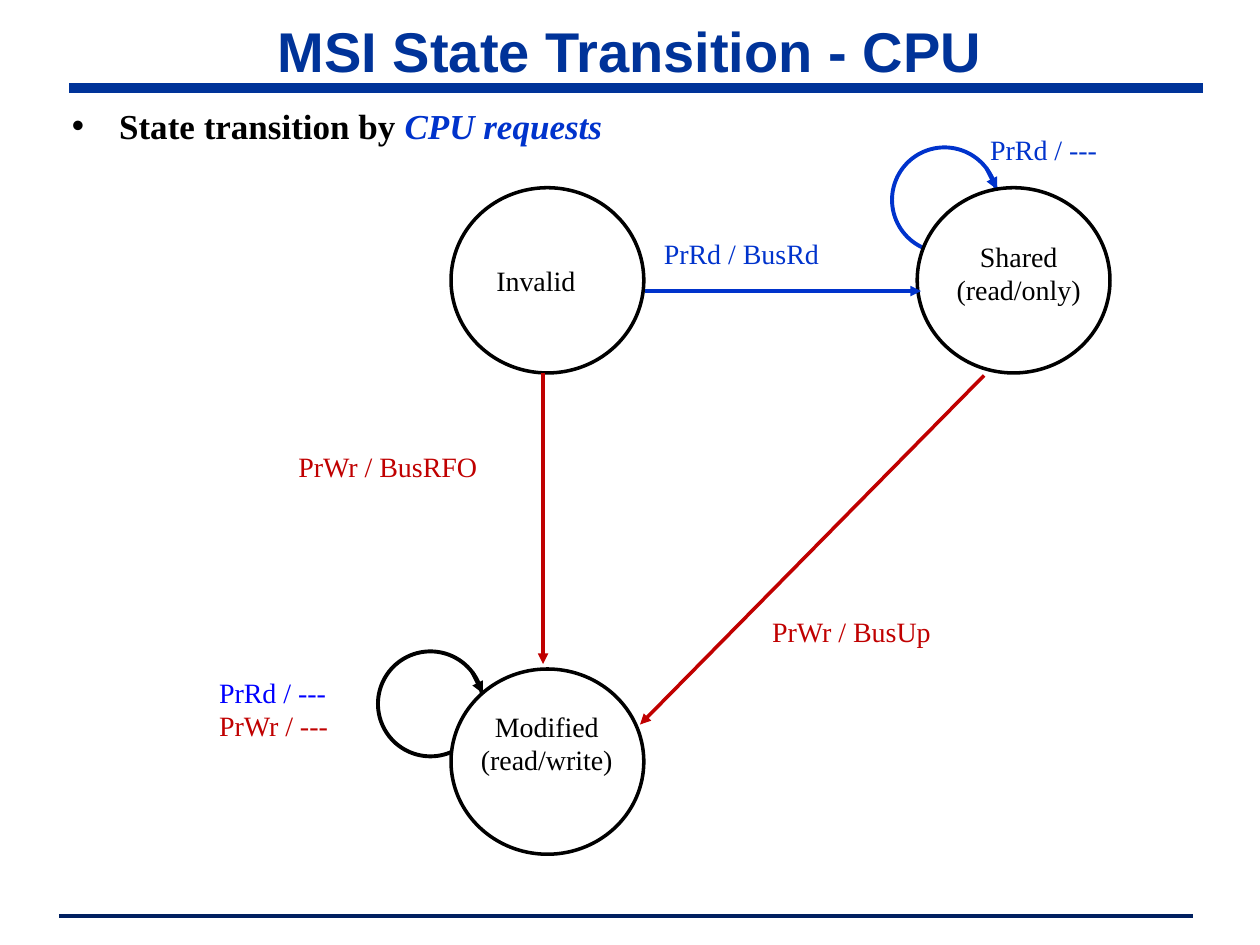
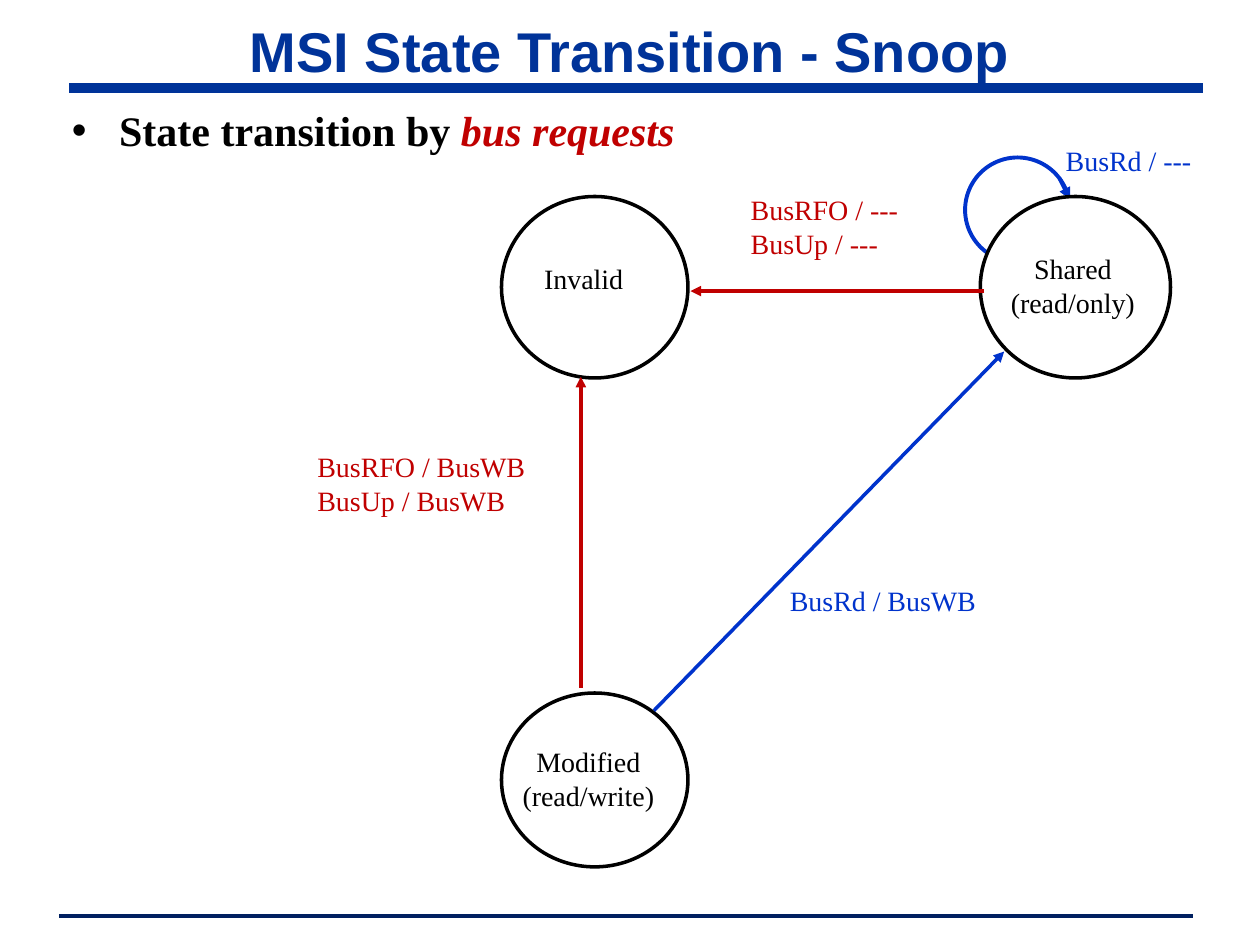
from dataclasses import dataclass

from lxml.etree import SubElement
from pptx import Presentation
from pptx.dml.color import RGBColor
from pptx.enum.shapes import MSO_CONNECTOR, MSO_SHAPE
from pptx.enum.text import MSO_ANCHOR, MSO_AUTO_SIZE, PP_ALIGN
from pptx.oxml.ns import qn
from pptx.util import Inches, Pt

COLORS = {
    "white": "FFFFFF",
    "black": "000000",
    "title": "003399",
    "footer": "002060",
    "read": "0033CC",
    "write": "C00000",
    "bright": "0000FF",
}
TITLE_FONT = "Arial"
TEXT_FONT = "Times New Roman"

WIDTH, HEIGHT = Inches(10), Inches(7.5)
COLUMNS, ROWS = 100, 75  # all positions below are grid columns and rows
LOOP_SIZE = 8.33
LABEL_SIZE = 16
STATE_LINE = 2
LOOP_LINE = 2.25


@dataclass(frozen=True)
class Box:
    left: float
    top: float
    width: float
    height: float

    def emu(self) -> tuple[int, int, int, int]:
        return (column(self.left), row(self.top),
                column(self.width), row(self.height))


@dataclass(frozen=True)
class Label:
    text: str
    box: Box
    colors: tuple[str, ...] = ("black",)
    centered: bool = False
    filled: bool = False


@dataclass(frozen=True)
class Arrow:
    start: tuple[float, float]
    end: tuple[float, float]
    color: str


@dataclass(frozen=True)
class Loop:
    left: float
    top: float
    color: str


@dataclass(frozen=True)
class Diagram:
    title: str
    request: str
    request_color: str
    body_size: int
    loops: tuple[Loop, ...]
    states: tuple[Box, ...]
    labels: tuple[Label, ...]
    arrows: tuple[Arrow, ...]


TITLE_BOX = Box(5, 1.6, 90, 4.7)
BODY_BOX = Box(4.7, 7.8, 90, 62.5)

DIAGRAMS = (
    Diagram(
        "MSI State Transition - CPU", "CPU requests", "read", 20,
        loops=(Loop(70.8, 11.7, "read"), Loop(30, 51.7, "black")),
        states=(
            Box(72.8, 14.9, 15.3, 14.7),
            Box(35.8, 53.1, 15.3, 14.7),
            Box(35.8, 14.9, 15.3, 14.7),
        ),
        labels=(
            Label("PrRd / ---", Box(77.6, 10, 11.3, 3.7), ("read",)),
            Label("Invalid", Box(38.4, 20.4, 8.5, 3.7), filled=True),
            Label("Shared\n(read/only)", Box(73.8, 18.5, 14.1, 6.4), centered=True),
            Label("Modified\n(read/write)", Box(35.8, 55.8, 15.2, 6.4), centered=True),
            Label("PrRd / BusRd", Box(51.7, 18.3, 15.7, 3.7), ("read",)),
            Label("PrWr / BusRFO", Box(22.7, 35.2, 17.6, 3.7), ("write",), filled=True),
            Label("PrWr / BusUp", Box(60.3, 48.3, 15.7, 3.7), ("write",), filled=True),
            Label("PrRd / ---\nPrWr / ---", Box(16.4, 53.1, 11.3, 6.4), ("bright", "write")),
        ),
        arrows=(
            Arrow((51.2, 23.1), (73.1, 23.1), "read"),
            Arrow((43.1, 29.6), (43.1, 52.7), "write"),
            Arrow((78.1, 29.8), (50.8, 57.5), "write"),
        ),
    ),
    Diagram(
        "MSI State Transition - Snoop", "bus requests", "write", 24,
        loops=(Loop(76.6, 12.5, "read"),),
        states=(
            Box(77.8, 15.6, 15.1, 14.4),
            Box(39.8, 55, 14.8, 13.8),
            Box(39.8, 15.6, 14.8, 14.4),
        ),
        labels=(
            Label("Invalid", Box(42.2, 20.3, 8.5, 3.7), filled=True),
            Label("Shared\n(read/only)", Box(78.1, 19.5, 14.1, 6.4), centered=True),
            Label("Modified\n(read/write)", Box(39.1, 58.6, 15.2, 6.4), centered=True),
            Label("BusRFO / BusWB\nBusUp / BusWB", Box(24.2, 35.2, 19.9, 6.4), ("write",)),
            Label("BusRd / BusWB", Box(61.7, 45.8, 18.1, 3.7), ("read",), filled=True),
            Label("BusRd / ---", Box(83.6, 10.9, 12.9, 3.7), ("read",)),
            Label("BusRFO / ---\nBusUp / ---", Box(58.6, 14.8, 14.7, 6.4), ("write",)),
        ),
        arrows=(
            Arrow((78.1, 23.1), (54.8, 23.1), "write"),
            Arrow((46.1, 54.6), (46.1, 29.9), "write"),
            Arrow((51.9, 56.4), (79.7, 27.9), "read"),
        ),
    ),
)


def column(count: float) -> int:
    return round(WIDTH * count / COLUMNS)


def row(count: float) -> int:
    return round(HEIGHT * count / ROWS)


def rgb(name: str) -> RGBColor:
    return RGBColor.from_string(COLORS[name])


def format_run(run, font: str, size: float, color: str,
               bold: bool = False, italic: bool = False) -> None:
    run.font.name = font
    run.font.size = Pt(size)
    run.font.color.rgb = rgb(color)
    run.font.bold = bold
    run.font.italic = italic


def place(shape, box: Box) -> None:
    shape.left, shape.top, shape.width, shape.height = box.emu()


def add_line(slide, start: tuple[float, float], end: tuple[float, float],
             color: str, width: float, arrow: bool = False) -> None:
    line = slide.shapes.add_connector(
        MSO_CONNECTOR.STRAIGHT,
        column(start[0]), row(start[1]), column(end[0]), row(end[1]))
    line.line.color.rgb = rgb(color)
    line.line.width = Pt(width)
    if arrow:
        SubElement(line.line._get_or_add_ln(), qn("a:tailEnd"), type="triangle")
    SubElement(line._element.spPr, qn("a:effectLst"))


def add_circle(slide, box: Box, color: str, width: float) -> None:
    circle = slide.shapes.add_shape(MSO_SHAPE.OVAL, *box.emu())
    circle.shadow.inherit = False
    circle.fill.solid()
    circle.fill.fore_color.rgb = rgb("white")
    circle.line.color.rgb = rgb(color)
    circle.line.width = Pt(width)


def add_loop(slide, loop: Loop) -> None:
    """Draw a self-transition; a state drawn later hides its lower part."""
    add_circle(slide, Box(loop.left, loop.top, LOOP_SIZE, LOOP_SIZE),
               loop.color, LOOP_LINE)
    start = (loop.left + 0.9 * LOOP_SIZE, loop.top + 0.2 * LOOP_SIZE)
    end = (loop.left + LOOP_SIZE, loop.top + 0.4 * LOOP_SIZE)
    add_line(slide, start, end, loop.color, LOOP_LINE, arrow=True)


def add_label(slide, label: Label) -> None:
    text_box = slide.shapes.add_textbox(*label.box.emu())
    if label.filled:
        text_box.fill.solid()
        text_box.fill.fore_color.rgb = rgb("white")
    text_frame = text_box.text_frame
    text_frame.word_wrap = label.centered
    text_frame.text = label.text
    for index, paragraph in enumerate(text_frame.paragraphs):
        paragraph.alignment = PP_ALIGN.CENTER if label.centered else PP_ALIGN.LEFT
        color = label.colors[min(index, len(label.colors) - 1)]
        format_run(paragraph.runs[0], TEXT_FONT, LABEL_SIZE, color)


def add_title(slide, text: str) -> None:
    title = slide.shapes.title
    place(title, TITLE_BOX)
    text_frame = title.text_frame
    text_frame.text = text
    text_frame.auto_size = MSO_AUTO_SIZE.NONE
    text_frame.vertical_anchor = MSO_ANCHOR.MIDDLE
    paragraph = text_frame.paragraphs[0]
    paragraph.alignment = PP_ALIGN.CENTER
    format_run(paragraph.runs[0], TITLE_FONT, 32, "title", bold=True)


def add_body(slide, diagram: Diagram) -> None:
    body = slide.placeholders[1]
    place(body, BODY_BOX)
    text_frame = body.text_frame
    text_frame.text = "State transition by "
    text_frame.auto_size = MSO_AUTO_SIZE.NONE
    paragraph = text_frame.paragraphs[0]
    paragraph.space_before = Pt(0)
    format_run(paragraph.runs[0], TEXT_FONT, diagram.body_size, "black", bold=True)
    request = paragraph.add_run()
    request.text = diagram.request
    format_run(request, TEXT_FONT, diagram.body_size, diagram.request_color,
               bold=True, italic=True)


def add_diagram_slide(presentation, diagram: Diagram) -> None:
    slide = presentation.slides.add_slide(presentation.slide_layouts[1])
    add_line(slide, (4.7, 72.7), (94.7, 72.7), "footer", 2.25)
    add_line(slide, (5.5, 7), (95.5, 7), "title", 6)
    add_title(slide, diagram.title)
    add_body(slide, diagram)
    for loop in diagram.loops:
        add_loop(slide, loop)
    for state in diagram.states:
        add_circle(slide, state, "black", STATE_LINE)
    for label in diagram.labels:
        add_label(slide, label)
    for arrow in diagram.arrows:
        add_line(slide, arrow.start, arrow.end, arrow.color, STATE_LINE, arrow=True)


def main() -> None:
    presentation = Presentation()
    presentation.slide_width, presentation.slide_height = WIDTH, HEIGHT
    for diagram in DIAGRAMS:
        add_diagram_slide(presentation, diagram)
    presentation.save("out.pptx")


if __name__ == "__main__":
    main()
